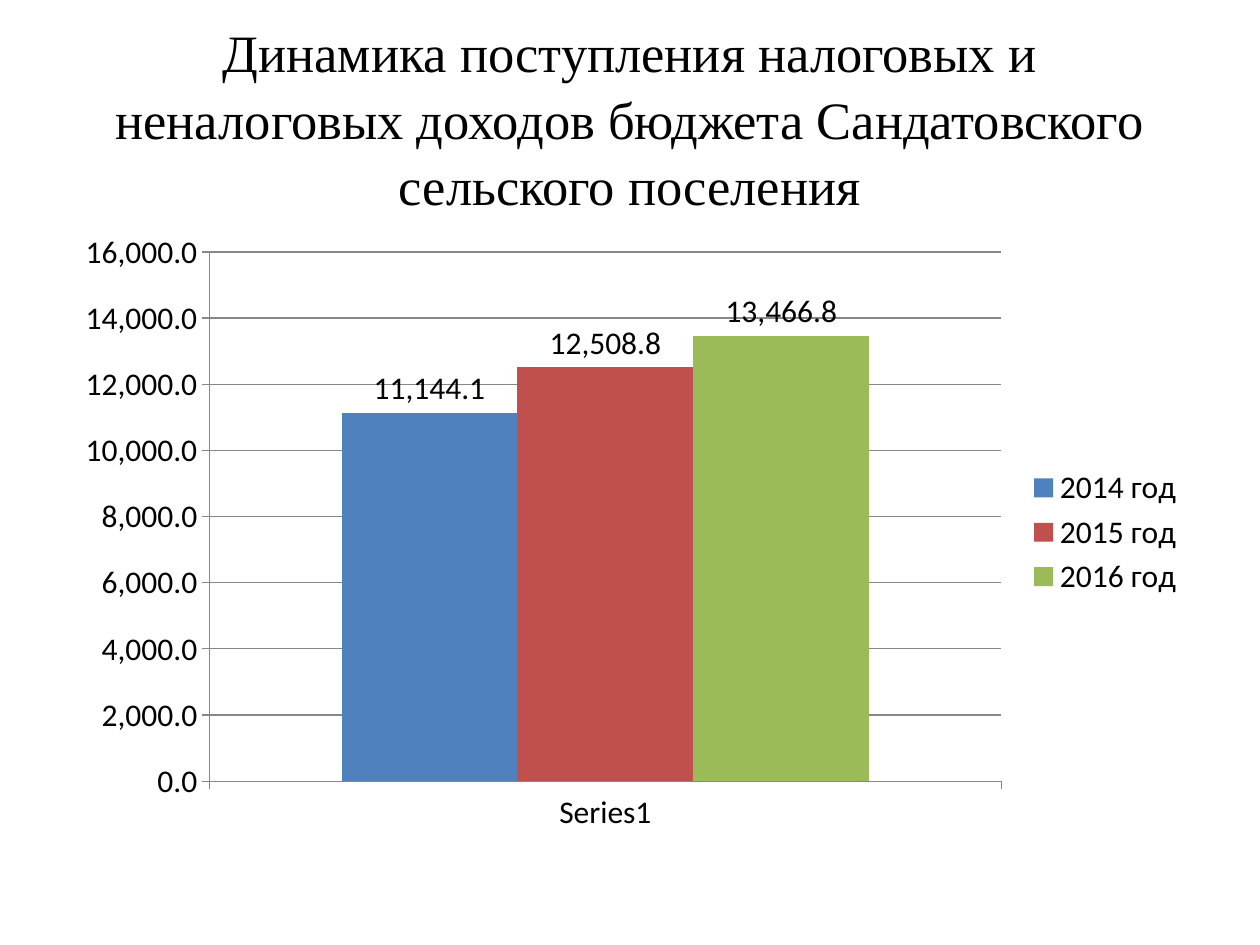
from pptx import Presentation
from pptx.chart.data import CategoryChartData
from pptx.dml.color import RGBColor
from pptx.enum.chart import XL_CHART_TYPE, XL_LABEL_POSITION, XL_LEGEND_POSITION, XL_TICK_MARK
from pptx.enum.text import MSO_ANCHOR, MSO_AUTO_SIZE, PP_ALIGN
from pptx.util import Pt

SCALE = 9144
GRAY = "878787"
NUM = "#,##0.0"
YEARS = [
    ("2014 год", 11144.1, "4F81BD"),
    ("2015 год", 12508.8, "C0504D"),
    ("2016 год", 13466.8, "9BBB59"),
]


def px(n):
    """Turn px into EMU."""
    return n * SCALE


def color(code):
    """Turn a hex string into a colour."""
    return RGBColor.from_string(code)


def assign(item, **vals):
    """Set each named value on the item."""
    for key, val in vals.items():
        setattr(item, key, val)


class Deck:
    """Hold the style and the current slide."""

    def __init__(self, wide, high):
        """Start a deck with one title-only slide."""
        self.deck = Presentation()
        assign(self.deck, slide_width=px(wide), slide_height=px(high))
        self.slide = self.deck.slides.add_slide(self.deck.slide_layouts[5])
        self.ink = "000000"

    def font(self, font, name, size):
        """Format a font in the text colour."""
        assign(font, name=name, size=Pt(size))
        font.color.rgb = color(self.ink)

    def line(self, line):
        """Format a thin chart line."""
        line.color.rgb = color(GRAY)
        line.width = Pt(0.75)

    def title(self, text, left, top, wide, high):
        """Place and format the title."""
        shape = self.slide.shapes.title
        assign(shape, left=px(left), top=px(top), width=px(wide), height=px(high))
        frame = shape.text_frame
        frame.text = text
        assign(frame, word_wrap=True, auto_size=MSO_AUTO_SIZE.NONE,
               vertical_anchor=MSO_ANCHOR.MIDDLE)
        para = frame.paragraphs[0]
        assign(para, alignment=PP_ALIGN.CENTER, line_spacing=1.05)
        self.font(para.runs[0].font, "Times New Roman", 30)

    def chart(self, cat, rows, left, top, wide, high):
        """Add a column chart with one series per row."""
        data = CategoryChartData(number_format=NUM)
        data.categories = [cat]
        for name, val, _ in rows:
            data.add_series(name, [val])
        chart = self.slide.shapes.add_chart(
            XL_CHART_TYPE.COLUMN_CLUSTERED,
            px(left), px(top), px(wide), px(high), data).chart
        assign(chart, has_title=False, has_legend=True)
        assign(chart.legend, position=XL_LEGEND_POSITION.RIGHT, include_in_layout=False)
        self.font(chart.font, "Calibri", 18)
        plot = chart.plots[0]
        assign(plot, gap_width=150, overlap=0, vary_by_categories=False)
        for item, row in zip(plot.series, rows):
            item.format.fill.solid()
            item.format.fill.fore_color.rgb = color(row[2])
            assign(item.data_labels, show_value=True, number_format=NUM,
                   number_format_is_linked=False,
                   position=XL_LABEL_POSITION.OUTSIDE_END)
        for axis in (chart.category_axis, chart.value_axis):
            axis.major_tick_mark = XL_TICK_MARK.OUTSIDE
            self.line(axis.format.line)
        axis = chart.value_axis
        assign(axis, minimum_scale=0, maximum_scale=16000, major_unit=2000,
               has_major_gridlines=True)
        assign(axis.tick_labels, number_format=NUM, number_format_is_linked=False)
        self.line(axis.major_gridlines.format.line)


def main():
    """Build the slide."""
    deck = Deck(1000, 750)
    deck.title("Динамика поступления налоговых и неналоговых доходов "
               "бюджета Сандатовского сельского поселения", 50, 30, 900, 125)
    deck.chart("Series1", YEARS, 50, 175, 900, 495)
    deck.deck.save("out.pptx")


if __name__ == "__main__":
    main()
